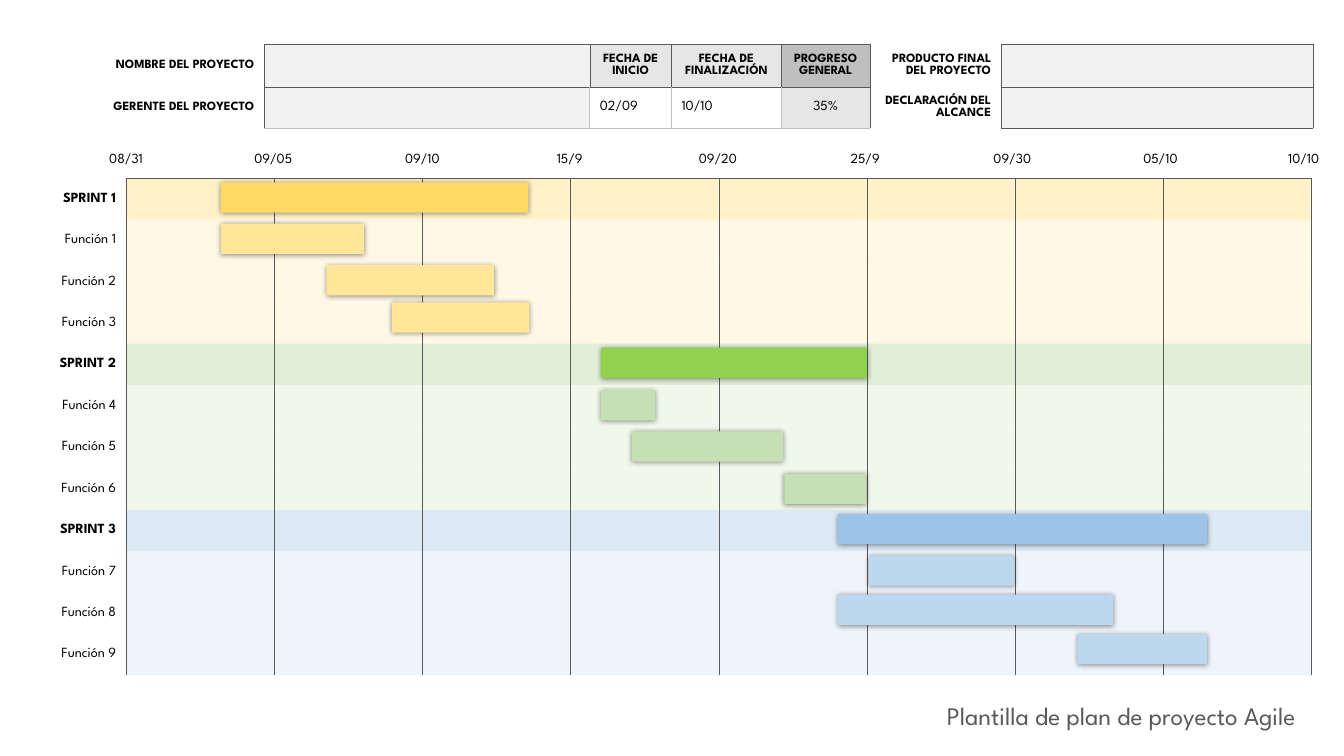
from lxml import etree
from pptx import Presentation
from pptx import util as u
from pptx.dml.color import RGBColor
from pptx.enum import shapes, text
from pptx.oxml.ns import qn

PX = 9144  # 100 px to the inch
FONT = "League Spartan"
NO_STYLE = "{2D5ABB26-0587-4C30-8999-92F81FD0307C}"
BLACK = RGBColor(0, 0, 0)
WHITE = RGBColor(255, 255, 255)
GREY = RGBColor(0x59, 0x59, 0x59)
SILVER = RGBColor(0xBF, 0xBF, 0xBF)
MIST = RGBColor(0xE7, 0xE6, 0xE6)
PALE = RGBColor(0xF2, 0xF2, 0xF2)
AMBER = RGBColor(0xFF, 0xD9, 0x66)
SAND = RGBColor(0xFF, 0xE6, 0x99)
CREAM = RGBColor(0xFF, 0xF2, 0xCC)
GREEN = RGBColor(0x92, 0xD0, 0x50)
SAGE = RGBColor(0xC5, 0xE0, 0xB4)
MINT = RGBColor(0xE2, 0xF0, 0xD9)
BLUE = RGBColor(0x9D, 0xC3, 0xE6)
SKY = RGBColor(0xBD, 0xD7, 0xEE)
ICE = RGBColor(0xDE, 0xEB, 0xF7)
LEFT, CENTER, RIGHT = text.PP_ALIGN.LEFT, text.PP_ALIGN.CENTER, text.PP_ALIGN.RIGHT


def write(frame, words, size, align, color=BLACK, bold=False):
    line = frame.paragraphs[0]
    line.alignment = align
    run = line.add_run()
    run.text = words
    run.font.name, run.font.size, run.font.bold = FONT, u.Pt(size), bold
    run.font.color.rgb = color


def paint(cell, fill, borders, alpha=100):
    """Borders map a side (L, R, T, B) to a colour."""
    props = cell._tc.get_or_add_tcPr()
    for side in "LRTB":
        if side in borders:
            width = u.Pt(0.5 if borders[side] == SILVER else 0.25)
            edge = etree.SubElement(props, qn(f"a:ln{side}"), w=str(width))
            solid = etree.SubElement(edge, qn("a:solidFill"))
            etree.SubElement(solid, qn("a:srgbClr"), val=str(borders[side]))
    if fill is None:
        cell.fill.background()
        return
    cell.fill.solid()
    cell.fill.fore_color.rgb = fill
    if alpha < 100:
        etree.SubElement(props.find(".//" + qn("a:solidFill") + "[last()]/../"
                                    + qn("a:solidFill") + "/" + qn("a:srgbClr"))
                         if not borders else props.find(qn("a:solidFill"))[0],
                         qn("a:alpha"), val=str(alpha * 1000))


deck = Presentation()
deck.slide_width, deck.slide_height = 1333 * PX, 750 * PX
slide = deck.slides.add_slide(deck.slide_layouts[6])

# Both tables start plain, with their own row and column sizes
schedule_cols, schedule_rows = [89] + [147] * 8, [41] * 7 + [42] + [41] * 4
header_cols, header_rows = [181, 323, 81, 109, 88, 130, 309], [42, 41]
tables = []
for left, top, cols, rows in ((36, 177, schedule_cols, schedule_rows),
                              (81, 44, header_cols, header_rows)):
    frame = slide.shapes.add_table(len(rows), len(cols), left * PX, top * PX,
                                   sum(cols) * PX, sum(rows) * PX)
    table = frame.table
    table.first_row = table.horz_banding = False
    table._tbl.tblPr.find(qn("a:tableStyleId")).text = NO_STYLE
    for col, width in zip(table.columns, cols):
        col.width = width * PX
    for row, height in zip(table.rows, rows):
        row.height = height * PX
    tables.append(table)
schedule, header = tables

# Schedule: task, bar left, top and width, by sprint
sprints = [
    (AMBER, SAND, SAND, CREAM, [
        ("SPRINT 1", 219, 181, 305), ("Función 1", 219, 222, 142),
        ("Función 2", 324, 263, 166), ("Función 3", 389, 300, 136)]),
    (GREEN, SAGE, SAGE, MINT, [
        ("SPRINT 2", 596, 345, 264), ("Función 4", 596, 387, 54),
        ("Función 5", 627, 428, 150), ("Función 6", 778, 470, 81)]),
    (BLUE, SKY, SKY, ICE, [
        ("SPRINT 3", 831, 510, 366), ("Función 7", 862, 551, 144),
        ("Función 8", 831, 590, 273), ("Función 9", 1069, 629, 128)]),
]
row = 0
for sprint_bar, task_bar, sprint_band, task_band, tasks in sprints:
    for place, (name, left, top, width) in enumerate(tasks):
        is_sprint = place == 0
        label = schedule.cell(row, 0)
        label.vertical_anchor = text.MSO_ANCHOR.MIDDLE
        write(label.text_frame, name, 10, RIGHT, bold=is_sprint)
        paint(label, None, {"R": GREY})
        for col in range(1, len(schedule_cols)):
            edges = {"L": GREY, "R": GREY}
            if row == 0:
                edges["T"] = GREY
            paint(schedule.cell(row, col), sprint_band if is_sprint else task_band, edges, 50)
        row += 1

        bar = slide.shapes.add_shape(shapes.MSO_SHAPE.RECTANGLE,
                                     left * PX, top * PX, width * PX, 30 * PX)
        bar.fill.solid()
        bar.fill.fore_color.rgb = sprint_bar if is_sprint else task_bar
        bar.line.fill.background()
        bar.shadow.inherit = False
        shadow = etree.SubElement(bar._element.spPr.find(qn("a:effectLst")), qn("a:outerShdw"),
                                  blurRad=str(u.Pt(4)), dist=str(u.Pt(0.5)), dir="5400000",
                                  algn="ctr", rotWithShape="0")
        shade = etree.SubElement(shadow, qn("a:srgbClr"), val="000000")
        etree.SubElement(shade, qn("a:alpha"), val="43000")

# Project header: words, alignment, fill, size, bold
header_cells = [
    [("NOMBRE DEL PROYECTO", RIGHT, None, 9, True), ("", LEFT, PALE, 9, False),
     ("FECHA DE INICIO", CENTER, MIST, 9, True), ("FECHA DE FINALIZACIÓN", CENTER, MIST, 9, True),
     ("PROGRESO GENERAL", CENTER, SILVER, 9, True),
     ("PRODUCTO FINAL DEL PROYECTO", RIGHT, None, 9, True), ("", LEFT, PALE, 9, False)],
    [("GERENTE DEL PROYECTO", RIGHT, None, 9, True), ("", LEFT, PALE, 9, False),
     ("02/09", LEFT, WHITE, 10, False), ("10/10", LEFT, WHITE, 10, False),
     ("35%", CENTER, MIST, 10, False),
     ("DECLARACIÓN DEL ALCANCE", RIGHT, None, 9, True), ("", LEFT, PALE, 9, False)],
]
for r, cells in enumerate(header_cells):
    for c, (words, align, fill, size, bold) in enumerate(cells):
        cell = header.cell(r, c)
        cell.vertical_anchor = text.MSO_ANCHOR.MIDDLE
        if words:
            write(cell.text_frame, words, size, align, bold=bold)
        edges = dict.fromkeys("LRTB", GREY)
        if c == 0:
            edges = {"R": GREY}
        elif c == 5:
            edges = {"L": GREY, "R": GREY}
        elif r == 1 and c < 5:
            edges = {"L": GREY if c == 1 else SILVER, "R": GREY if c == 4 else SILVER,
                     "T": GREY, "B": SILVER}
        paint(cell, fill, edges)

# Date axis and slide title
captions = [(date, left, 143, 62, 27, 10, CENTER, BLACK, 10) for date, left in (
    ("08/31", 94), ("09/05", 240), ("09/10", 388), ("15/9", 534), ("09/20", 681),
    ("25/9", 827), ("09/30", 973), ("05/10", 1120), ("10/10", 1262))]
captions.append(("Plantilla de plan de proyecto Agile", 582, 690, 719, 40, 18, RIGHT, GREY, 16))
for words, left, top, width, height, size, align, color, inset in captions:
    box = slide.shapes.add_textbox(left * PX, top * PX, width * PX, height * PX)
    box.text_frame.word_wrap = True
    box.text_frame.margin_right = inset * PX
    write(box.text_frame, words, size, align, color)

deck.save("out.pptx")
